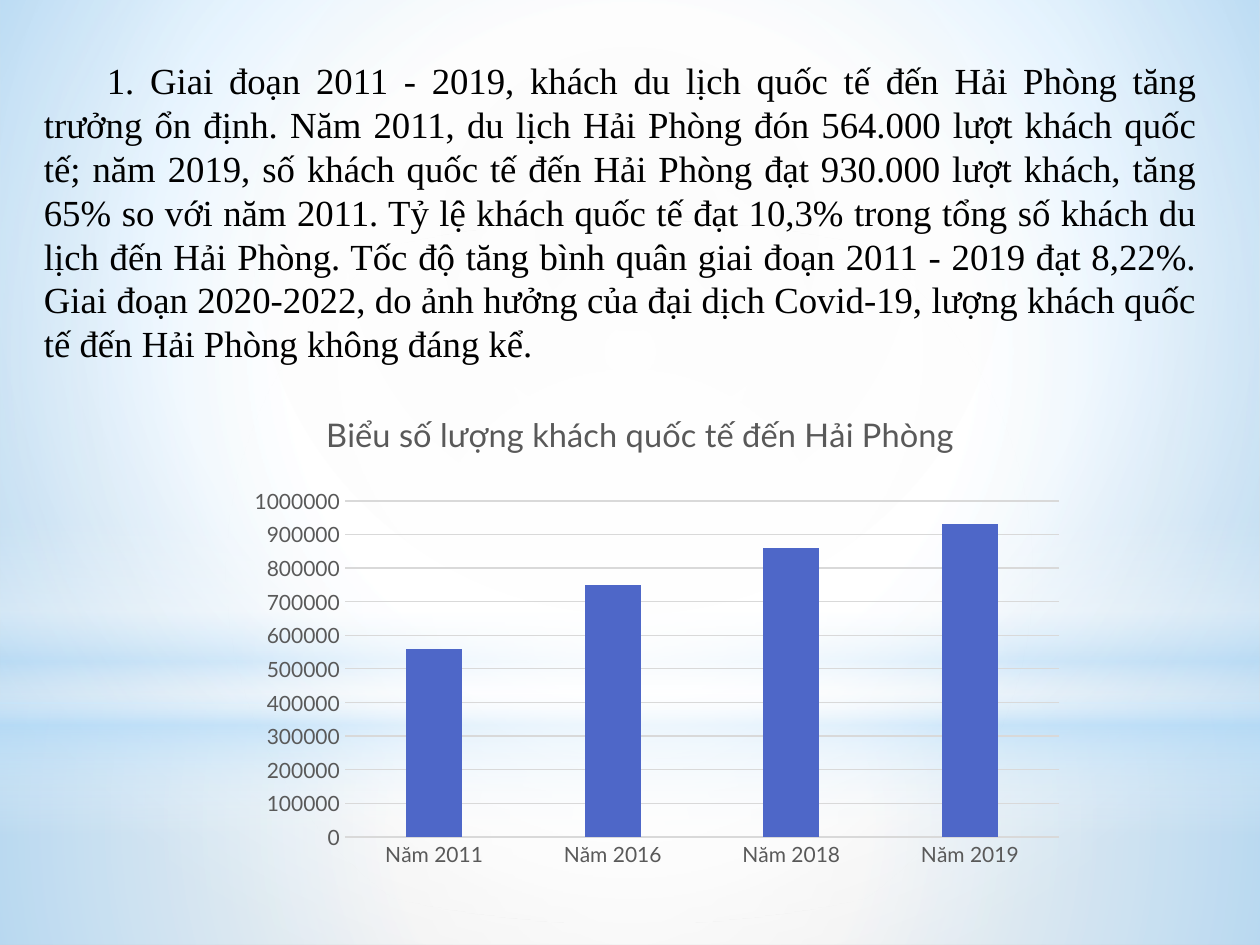
from lxml import etree
from pptx import Presentation
from pptx.chart.data import CategoryChartData
from pptx.dml.color import RGBColor
from pptx.enum.chart import XL_CHART_TYPE, XL_TICK_MARK
from pptx.enum.shapes import MSO_SHAPE
from pptx.enum.text import PP_ALIGN
from pptx.oxml import parse_xml
from pptx.oxml.ns import nsdecls, qn
from pptx.util import Inches, Pt

RECTANGLE, OVAL = MSO_SHAPE.RECTANGLE, MSO_SHAPE.OVAL
COLUMNS = XL_CHART_TYPE.COLUMN_CLUSTERED
NO_TICK = XL_TICK_MARK.NONE
JUSTIFY = PP_ALIGN.JUSTIFY

WIDTH, HEIGHT = Inches(10), Inches(7.5)
COLORS = {
    "white": "FFFFFF", "pale": "F4F4F4", "gray": "CCCCCC", "sky": "B4DCFA",
    "text": "000000", "label": "595959", "grid": "D9D9D9", "bar": "4E67C8",
}
CENTER = (50, 50, 50, 50)
PASSAGE = (
    "1. Giai đoạn 2011 - 2019, khách du lịch quốc tế đến Hải Phòng tăng trưởng ổn định. "
    "Năm 2011, du lịch Hải Phòng đón 564.000 lượt khách quốc tế; năm 2019, số khách quốc tế "
    "đến Hải Phòng đạt 930.000 lượt khách, tăng 65% so với năm 2011. Tỷ lệ khách quốc tế đạt "
    "10,3% trong tổng số khách du lịch đến Hải Phòng. Tốc độ tăng bình quân giai đoạn "
    "2011 - 2019 đạt 8,22%. Giai đoạn 2020-2022, do ảnh hưởng của đại dịch Covid-19, lượng "
    "khách quốc tế đến Hải Phòng không đáng kể."
)
VISITORS = {"Năm 2011": 560000, "Năm 2016": 750000, "Năm 2018": 860000, "Năm 2019": 930000}


def rgb(name):
    return RGBColor.from_string(COLORS[name])


def share_box(left, top, width, height):
    """Turn shares of the slide into a box in slide units."""
    return (int(left * WIDTH), int(top * HEIGHT), int(width * WIDTH), int(height * HEIGHT))


def set_gradient(fill, owner, stops, focus=None):
    """Fill with (position, colour, opacity) stops: circular around focus, else downwards."""
    fill.solid()
    solid = owner.find(".//" + qn("a:solidFill"))
    gradient = parse_xml(f'<a:gradFill {nsdecls("a")} rotWithShape="1"><a:gsLst/></a:gradFill>')
    for position, color, opacity in stops:
        stop = etree.SubElement(gradient[0], qn("a:gs"), pos=str(position * 1000))
        tint = etree.SubElement(stop, qn("a:srgbClr"), val=COLORS[color])
        if opacity < 100:
            etree.SubElement(tint, qn("a:alpha"), val=str(opacity * 1000))
    if focus:
        circle = etree.SubElement(gradient, qn("a:path"), path="circle")
        sides = {side: str(share * 1000) for side, share in zip("ltrb", focus)}
        etree.SubElement(circle, qn("a:fillToRect"), sides)
    else:
        etree.SubElement(gradient, qn("a:lin"), ang=str(90 * 60000), scaled="0")
    solid.getparent().replace(solid, gradient)


def add_glow(page, kind, box, stops, focus=None):
    glow = page.shapes.add_shape(kind, *box)
    glow.shadow.inherit = False
    glow.line.fill.background()
    set_gradient(glow.fill, glow.element, stops, focus)


def add_backdrop(page, horizon):
    """Paint the sky above the horizon, the ground below it, a band and a spotlight."""
    set_gradient(page.background.fill, page.element,
                 [(0, "pale", 100), (60, "white", 100), (100, "gray", 100)], (20, 10, 20, 60))
    add_glow(page, RECTANGLE, share_box(0, horizon, 1, 1 - horizon),
             [(0, "white", 91), (37, "white", 76), (100, "sky", 79)], CENTER)
    add_glow(page, RECTANGLE, share_box(0, 0, 1, horizon),
             [(0, "white", 89), (48, "white", 62), (100, "sky", 79)], CENTER)
    add_glow(page, RECTANGLE, share_box(0, 0.55, 1, 1 / 3),
             [(0, "white", 0), (29, "white", 30), (45, "sky", 40),
              (55, "white", 26), (65, "sky", 60), (100, "white", 0)])
    add_glow(page, OVAL, share_box(0, 0.233, 1, horizon),
             [(0, "white", 100), (56, "white", 0)], CENTER)


def add_passage(page, box):
    frame = page.shapes.add_textbox(*box).text_frame
    frame.word_wrap = True
    para = frame.paragraphs[0]
    para.text = PASSAGE
    para.alignment = JUSTIFY
    para.line_spacing = Pt(25)
    para.space_before = para.space_after = Pt(6)
    para._p.get_or_add_pPr().set("indent", str(Inches(0.5)))
    font = para.runs[0].font
    font.name, font.size = "Times New Roman", Pt(21)
    font.color.rgb = rgb("text")


def style_font(font, size):
    font.name, font.size, font.bold = "Lato", Pt(size), False
    font.color.rgb = rgb("label")


def style_line(line):
    line.color.rgb = rgb("grid")
    line.width = Pt(0.75)


def place_plot(chart, left, top, width, height):
    """Fix the inner plot area at shares of the chart's box."""
    area = chart.element.find(".//" + qn("c:plotArea"))
    for layout in area.findall(qn("c:layout")):
        area.remove(layout)
    layout = parse_xml(f'<c:layout {nsdecls("c")}><c:manualLayout/></c:layout>')
    settings = {"layoutTarget": "inner", "xMode": "edge", "yMode": "edge",
                "x": left, "y": top, "w": width, "h": height}
    for tag, value in settings.items():
        etree.SubElement(layout[0], qn(f"c:{tag}"), val=str(value))
    area.insert(0, layout)


def add_visitor_chart(page, box):
    data = CategoryChartData()
    data.categories = list(VISITORS)
    data.add_series("Series 1", list(VISITORS.values()))
    chart = page.shapes.add_chart(COLUMNS, *box, data).chart
    style_font(chart.font, 10)
    chart.has_legend = False
    title = chart.chart_title.text_frame
    title.text = "Biểu số lượng khách quốc tế đến Hải Phòng"
    style_font(title.paragraphs[0].runs[0].font, 18.6)

    for axis in (chart.category_axis, chart.value_axis):
        axis.major_tick_mark = axis.minor_tick_mark = NO_TICK
        style_font(axis.tick_labels.font, 12)
    style_line(chart.category_axis.format.line)
    values = chart.value_axis
    values.minimum_scale, values.maximum_scale, values.major_unit = 0, 1000000, 100000
    values.format.line.fill.background()
    style_line(values.major_gridlines.format.line)

    plot = chart.plots[0]
    plot.gap_width = 219
    plot.vary_by_categories = False
    bars = plot.series[0].format.fill
    bars.solid()
    bars.fore_color.rgb = rgb("bar")
    place_plot(chart, 0.148, 0.233, 0.85, 0.696)


def main():
    deck = Presentation()
    deck.slide_width, deck.slide_height = WIDTH, HEIGHT
    page = deck.slides.add_slide(deck.slide_layouts[6])
    add_backdrop(page, horizon=0.744)
    add_passage(page, share_box(0.025, 0.0555, 0.935, 0.455))
    add_visitor_chart(page, share_box(0.175, 0.411, 0.667, 0.511))
    deck.save("out.pptx")


if __name__ == "__main__":
    main()
